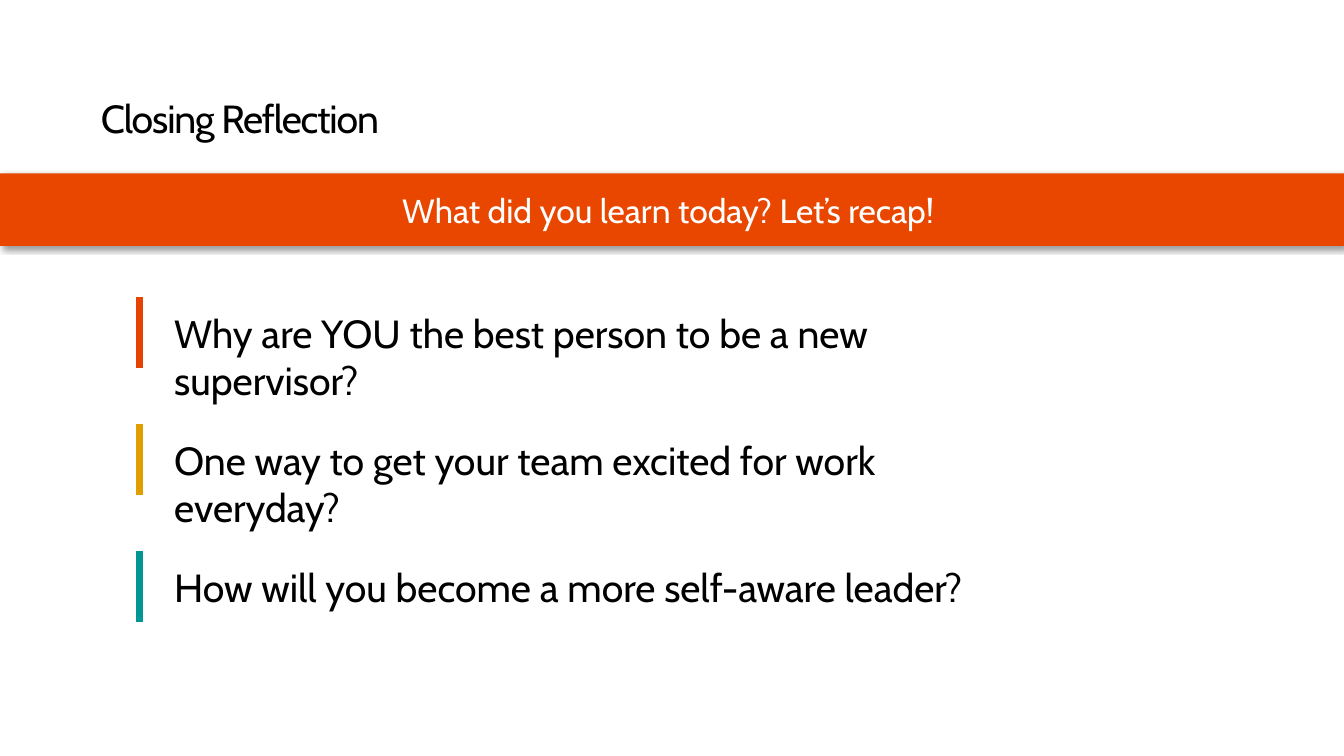
"""Build the closing reflection slide with a banner and three questions."""
from lxml import etree
from pptx import Presentation
from pptx.dml.color import RGBColor
from pptx.enum.shapes import MSO_CONNECTOR as CONNECTOR, MSO_SHAPE as SHAPE
from pptx.enum.text import MSO_ANCHOR as ANCHOR, PP_ALIGN as ALIGN
from pptx.oxml import parse_xml
from pptx.oxml.ns import nsdecls, qn
from pptx.util import Inches, Pt


def color(value):
    return RGBColor.from_string(value)


def write(frame, text, size, ink, frame_format, para_format):
    for name, value in frame_format.items():
        setattr(frame, name, value)
    para = frame.paragraphs[0]
    for name, value in para_format.items():
        setattr(para, name, value)
    span = para.add_run()
    span.text = text
    for name, value in {"name": "Cabin", "size": Pt(size), "bold": False}.items():
        setattr(span.font, name, value)
    span.font.color.rgb = color(ink)
    return span


deck = Presentation()
deck.slide_width, deck.slide_height = Inches(13.33), Inches(7.5)
page = deck.slides.add_slide(deck.slide_layouts[5])

title = page.shapes.title
title.left, title.top = Inches(1), Inches(0.76)
title.width, title.height = Inches(11.33), Inches(0.65)
title_format = {
    "margin_left": 0, "margin_right": 0, "margin_top": Inches(0.05),
    "margin_bottom": 0, "vertical_anchor": ANCHOR.BOTTOM, "word_wrap": True,
}
span = write(title.text_frame, "Closing Reflection", 28, "000000", title_format,
             {"alignment": ALIGN.LEFT, "line_spacing": 0.9})
span.font._element.set("spc", "-80")

banner = page.shapes.add_shape(
    SHAPE.RECTANGLE, 0, Inches(1.72), Inches(13.33), Inches(0.72))
banner.fill.solid()
banner.fill.fore_color.rgb = color("E94600")
banner.line.fill.background()
banner._element.spPr.append(parse_xml(
    f'<a:effectLst {nsdecls("a")}>'
    '<a:outerShdw blurRad="50800" dist="38100" dir="2700000" algn="tl" rotWithShape="0">'
    '<a:srgbClr val="000000"><a:alpha val="40000"/></a:srgbClr>'
    '</a:outerShdw></a:effectLst>'))
write(banner.text_frame, "What did you learn today? Let’s recap! ", 24, "FFFFFF",
      {"vertical_anchor": ANCHOR.MIDDLE, "word_wrap": True},
      {"alignment": ALIGN.CENTER})

questions = [
    ("Why are YOU the best person to be a new supervisor?", "E44400"),
    ("One way to get your team excited for work everyday?", "E19E00"),
    ("How will you become a more self-aware leader?", "009693"),
]
for index, (question, accent) in enumerate(questions):
    top = 2.95 + 1.26 * index
    box = page.shapes.add_textbox(
        Inches(1.63), Inches(top + 0.07), Inches(8.43), Inches(0.57))
    write(box.text_frame, question, 28, "000000",
          {"word_wrap": True, "vertical_anchor": ANCHOR.TOP},
          {"alignment": ALIGN.LEFT})
    bar = page.shapes.add_connector(
        CONNECTOR.STRAIGHT, Inches(1.38), Inches(top), Inches(1.38), Inches(top + 0.7))
    bar.line.color.rgb = color(accent)
    bar.line.width = Pt(5)
    etree.SubElement(bar._element.spPr, qn("a:effectLst"))

deck.save("out.pptx")
